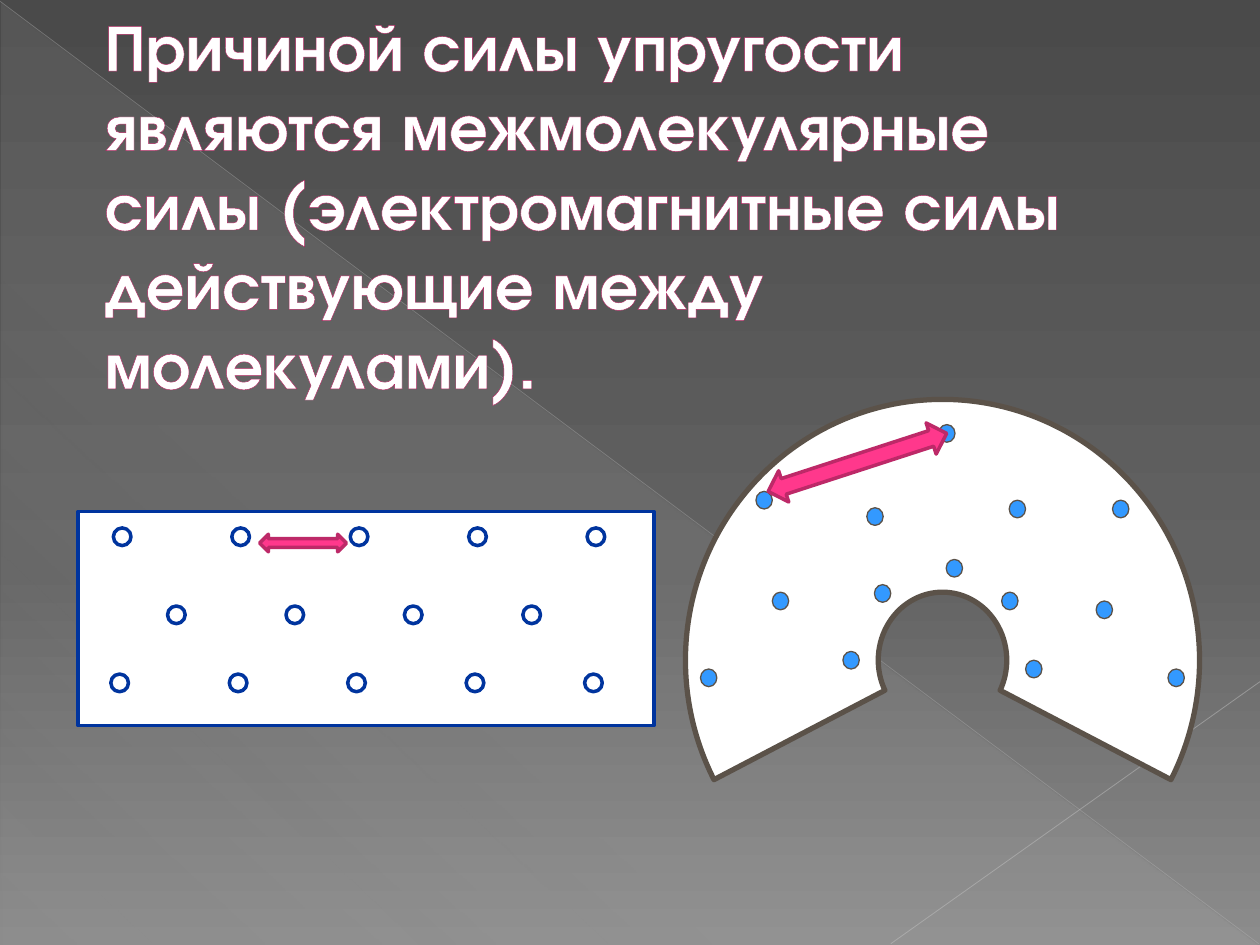
from lxml import etree
from pptx import Presentation
from pptx import util as u
from pptx.dml.color import RGBColor
from pptx.enum import shapes, text
from pptx.oxml.ns import qn

STATEMENT = ("Причиной силы упругости являются межмолекулярные силы "
             "(электромагнитные силы действующие между молекулами).")
FONT = "TeX Gyre Adventor"
COLORS = {"white": "FFFFFF", "blue": "00349E", "molecule": "3399FF", "brown": "5B5249",
          "pink": "FF388C", "dark pink": "BD2968", "outline": "B12761"}
BACKDROP = [(0, "4A4A4A", 100), (60, "626262", 100), (100, "8C8C8C", 100)]
SHEEN = [(0, "D2D2D2", 10), (70, "D2D2D2", 8), (100, "D2D2D2", 1)]
RAYS = [((0, 0.01), (9.99, 7.49), "BFBFBF", 0.39, 35),
        ((10, 5.41), (7.07, 7.49), "C6C6C6", 0.47, 45)]

BENT_BODY = (5.44, 3.17, 4.08, 4.14)
BENT_END_ANGLE = 27.6
BENT_THICKNESS = 1.53
BENT_MOLECULES = [(7.45, 3.37), (6.13, 4.7), (5.56, 5.31), (6.69, 5.17), (9.27, 5.31),
                  (7.95, 4.7), (8.01, 3.97), (7.51, 4.44), (8.83, 3.97), (6.94, 4.64),
                  (6.88, 4.03), (8.14, 5.24), (6, 3.9), (8.7, 4.77)]
FLAT_BODY = (0.62, 4.06, 4.57, 1.7)
FLAT_ROWS = [(0.9, 4.19, 0.94, 5), (1.33, 4.81, 0.94, 4), (0.88, 5.35, 0.94, 5)]
FORCES = [((2.06, 4.24, 0.69, 0.14), 0), ((6.06, 3.54, 1.49, 0.26), 342)]


def add_stop_color(parent, color, alpha):
    node = etree.SubElement(parent, qn("a:srgbClr"), val=color)
    if alpha < 100:
        etree.SubElement(node, qn("a:alpha"), val=str(alpha * 1000))


def set_gradient(fill, owner, stops, angle):
    fill.gradient()
    fill.gradient_angle = 360 - angle
    stop_list = next(owner.iter(qn("a:gsLst")))
    for old in list(stop_list):
        stop_list.remove(old)
    for position, color, alpha in stops:
        stop = etree.SubElement(stop_list, qn("a:gs"), pos=str(position * 1000))
        add_stop_color(stop, color, alpha)


def add_figure(slide, kind, box, fill=None, line=None, width=0):
    figure = slide.shapes.add_shape(kind, *map(u.Inches, box))
    figure.shadow.inherit = False
    if fill:
        figure.fill.solid()
        figure.fill.fore_color.rgb = RGBColor.from_string(COLORS[fill])
    if line:
        figure.line.color.rgb = RGBColor.from_string(COLORS[line])
        figure.line.width = u.Pt(width)
    else:
        figure.line.fill.background()
    return figure


def add_backdrop(slide):
    set_gradient(slide.background.fill, slide._element, BACKDROP, 90)
    sheen = add_figure(slide, shapes.MSO_SHAPE.RIGHT_TRIANGLE, (0.01, 0.02, 9.98, 7.48))
    set_gradient(sheen.fill, sheen._element, SHEEN, 133)
    for start, end, color, width, alpha in RAYS:
        ray = slide.shapes.add_connector(shapes.MSO_CONNECTOR.STRAIGHT,
                                         *map(u.Inches, start + end))
        ray.line.width = u.Pt(width)
        ray.line.color.rgb = RGBColor.from_string(color)
        etree.SubElement(next(ray._element.iter(qn("a:srgbClr"))), qn("a:alpha"),
                         val=str(alpha * 1000))
        etree.SubElement(ray._element.spPr, qn("a:effectLst"))


def add_statement(slide):
    title = slide.shapes.title
    title.left, title.top, title.width, title.height = map(u.Inches, (0.2, 0.29, 9, 2.65))
    slide.shapes._spTree.append(title._element)
    frame = title.text_frame
    frame.word_wrap = True
    frame.auto_size = text.MSO_AUTO_SIZE.NONE
    frame.vertical_anchor = text.MSO_ANCHOR.MIDDLE
    paragraph = frame.paragraphs[0]
    paragraph.alignment = text.PP_ALIGN.LEFT
    properties = paragraph._p.get_or_add_pPr()
    properties.set("marL", str(u.Inches(0.53)))
    properties.set("indent", "0")
    statement = paragraph.add_run()
    statement.text = STATEMENT
    font = statement.font
    font.name, font.size, font.bold = FONT, u.Pt(37.8), True
    font.color.rgb = RGBColor.from_string(COLORS["white"])
    outline = etree.Element(qn("a:ln"), w=str(u.Pt(0.5)))
    add_stop_color(etree.SubElement(outline, qn("a:solidFill")), COLORS["outline"], 100)
    statement._r.get_or_add_rPr().insert(0, outline)


def add_bent_body(slide):
    body = add_figure(slide, shapes.MSO_SHAPE.BLOCK_ARC, BENT_BODY, "white", "brown", 3)
    body.adjustments[0] = (180 - BENT_END_ANGLE) * 0.6
    body.adjustments[1] = BENT_END_ANGLE * 0.6
    body.adjustments[2] = BENT_THICKNESS / BENT_BODY[2]
    for left, top in BENT_MOLECULES:
        add_figure(slide, shapes.MSO_SHAPE.OVAL, (left, top, 0.13, 0.14),
                   "molecule", "brown", 0.75)


def add_flat_body(slide):
    add_figure(slide, shapes.MSO_SHAPE.RECTANGLE, FLAT_BODY, "white", "blue", 2)
    for left, top, step, count in FLAT_ROWS:
        for column in range(count):
            add_figure(slide, shapes.MSO_SHAPE.OVAL, (left + column * step, top, 0.14, 0.14),
                       "white", "blue", 2)


def main():
    deck = Presentation()
    deck.slide_width, deck.slide_height = u.Inches(10), u.Inches(7.5)
    slide = deck.slides.add_slide(deck.slide_layouts[5])
    add_backdrop(slide)
    add_statement(slide)
    add_bent_body(slide)
    add_flat_body(slide)
    for box, angle in FORCES:
        force = add_figure(slide, shapes.MSO_SHAPE.LEFT_RIGHT_ARROW, box,
                           "pink", "dark pink", 2)
        force.rotation = angle
    deck.save("out.pptx")


if __name__ == "__main__":
    main()
